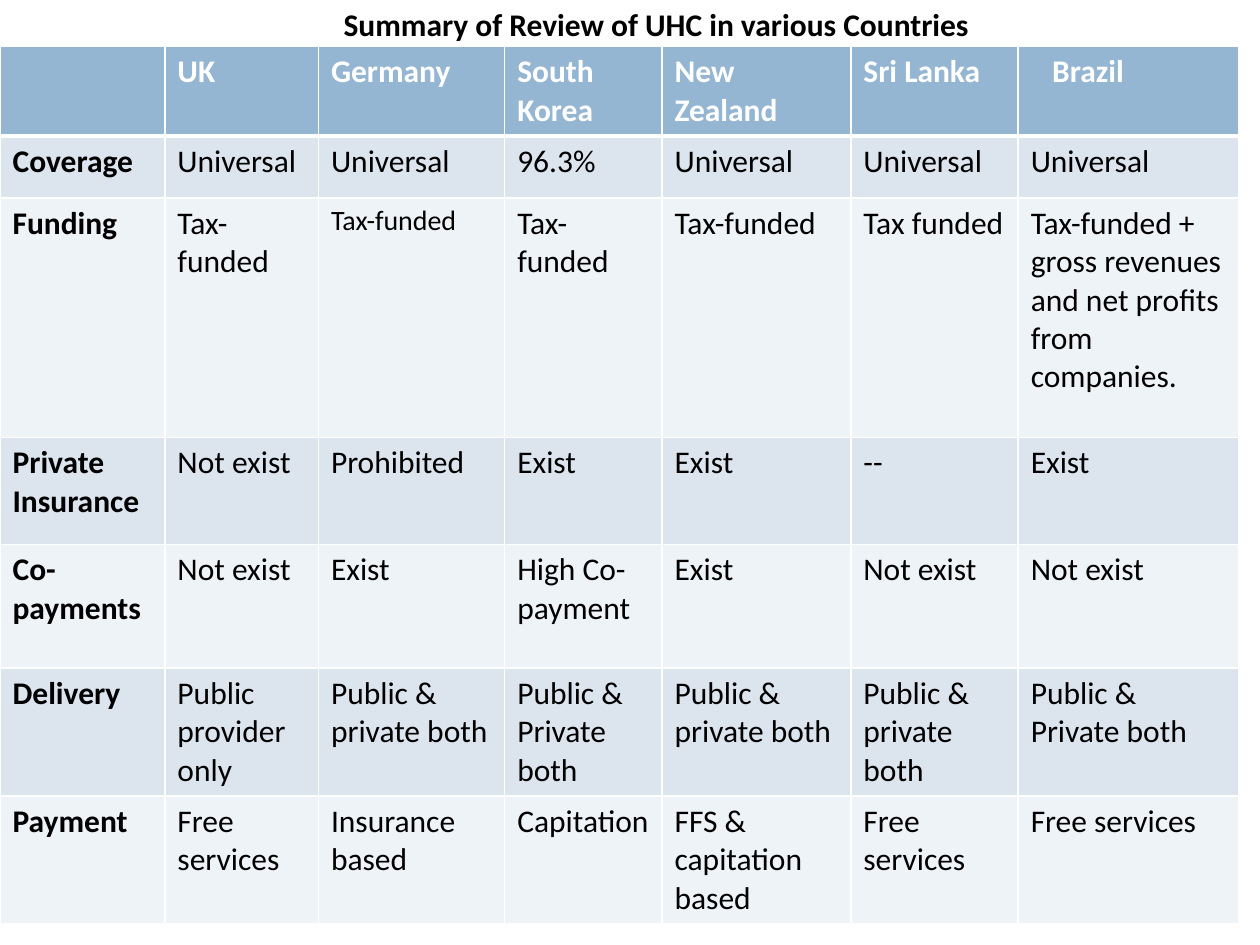
from dataclasses import dataclass

from lxml.etree import SubElement
from pptx import Presentation
from pptx.dml.color import RGBColor
from pptx.enum.text import MSO_AUTO_SIZE, PP_ALIGN
from pptx.oxml.ns import qn
from pptx.util import Inches, Pt


@dataclass(frozen=True)
class Theme:
    """Colours, font and sizes of the slide."""
    font: str = "Calibri"
    size: int = 18
    small: int = 16
    ink: str = "000000"
    white: str = "FFFFFF"
    head: str = "94B6D2"
    bands: tuple = ("DCE5EE", "EEF3F7")
    thin: int = 1
    thick: int = 3


THEME = Theme()
TITLE = "Summary of Review of UHC in various Countries"
COLS = (1.31, 1.22, 1.48, 1.25, 1.5, 1.33, 1.75)
ROWS = (0.68, 0.49, 1.9, 0.85, 0.98, 0.98, 0.98)
DATA = (
    ("", "UK", "Germany", "South Korea", "New Zealand", "Sri Lanka", "Brazil"),
    ("Coverage", "Universal", "Universal", "96.3%", "Universal", "Universal",
     "Universal"),
    ("Funding", "Tax-funded", "Tax-funded", "Tax-funded", "Tax-funded",
     "Tax funded",
     "Tax-funded + gross revenues and net profits from companies."),
    ("Private Insurance", "Not exist", "Prohibited", "Exist", "Exist", "--",
     "Exist"),
    ("Co-payments", "Not exist", "Exist", "High Co-payment", "Exist",
     "Not exist", "Not exist"),
    ("Delivery", "Public provider only", "Public & private both",
     "Public & Private both", "Public & private both",
     "Public & private both", "Public & Private both"),
    ("Payment", "Free services", "Insurance based", "Capitation",
     "FFS & capitation based", "Free services", "Free services"),
)
SMALL = (2, 2)
INSET = (0, 6)


def add_run(para, text, color, bold, size=THEME.size):
    """Add one styled run to a paragraph."""
    run = para.add_run()
    run.text = text
    font = run.font
    font.name, font.size, font.bold = THEME.font, Pt(size), bold
    font.color.rgb = RGBColor.from_string(color)


def add_edge(cell, side, width):
    """Draw a white border on one side of a cell."""
    props = cell._tc.get_or_add_tcPr()
    line = SubElement(props, qn(f"a:ln{side}"), w=str(Pt(width)))
    fill = SubElement(line, qn("a:solidFill"))
    SubElement(fill, qn("a:srgbClr"), val=THEME.white)


def style_cell(cell, row):
    """Set the borders and the fill of a cell by its row."""
    for side in "LRTB":
        heavy = (row, side) in ((0, "B"), (1, "T"))
        add_edge(cell, side, THEME.thick if heavy else THEME.thin)
    color = THEME.bands[(row - 1) % 2] if row else THEME.head
    cell.fill.solid()
    cell.fill.fore_color.rgb = RGBColor.from_string(color)


def add_grid(slide, left, top, width, height):
    """Place the table of countries in the given box."""
    frame = slide.shapes.add_table(len(ROWS), len(COLS), left, top, width,
                                   height)
    table = frame.table
    for col, size in zip(table.columns, COLS):
        col.width = Inches(size * width / Inches(sum(COLS)))
    for row, size in zip(table.rows, ROWS):
        row.height = Inches(size)
    for r, line in enumerate(DATA):
        for c, text in enumerate(line):
            cell = table.cell(r, c)
            style_cell(cell, r)
            if (r, c) == INSET:
                cell.margin_left = Inches(0.27)
            if text:
                add_run(cell.text_frame.paragraphs[0], text,
                        THEME.ink if r else THEME.white, r == 0 or c == 0,
                        THEME.small if (r, c) == SMALL else THEME.size)


def add_title(slide, left, top, width, height):
    """Place the centred title in the given box."""
    frame = slide.shapes.add_textbox(left, top, width, height).text_frame
    frame.word_wrap = True
    frame.auto_size = MSO_AUTO_SIZE.SHAPE_TO_FIT_TEXT
    para = frame.paragraphs[0]
    para.alignment = PP_ALIGN.CENTER
    add_run(para, TITLE, THEME.ink, True)


def main():
    """Build the slide and save it."""
    deck = Presentation()
    deck.slide_width, deck.slide_height = Inches(10), Inches(7.5)
    slide = deck.slides.add_slide(deck.slide_layouts[6])
    add_grid(slide, Inches(0), Inches(0.37), Inches(9.83), Inches(6.94))
    add_title(slide, Inches(2.17), Inches(-0.01), Inches(6.08), Inches(0.4))
    deck.save("out.pptx")


if __name__ == "__main__":
    main()
